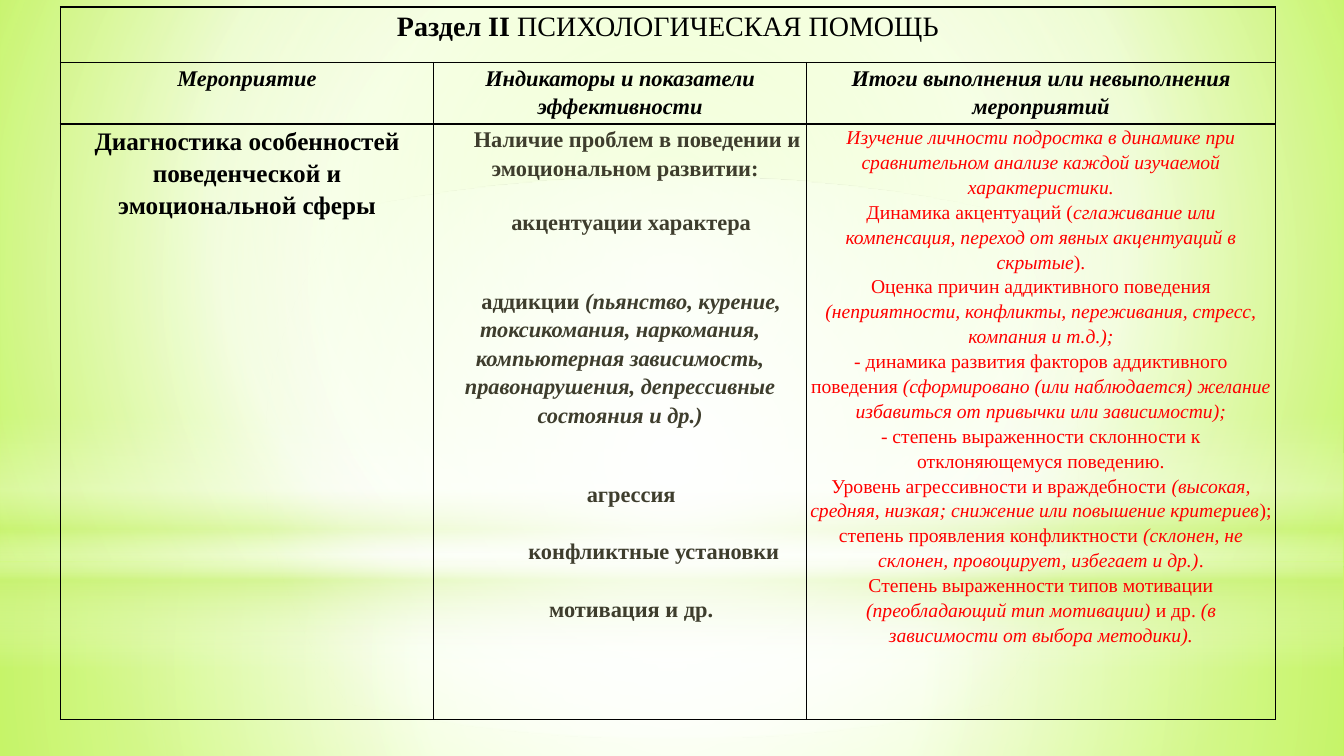
from lxml import etree
from pptx import Presentation
from pptx.dml.color import RGBColor
from pptx.enum.shapes import MSO_SHAPE as Shape
from pptx.enum.text import PP_ALIGN as Align
from pptx.oxml.ns import qn
from pptx.util import Inches, Pt

BLACK = RGBColor(0x00, 0x00, 0x00)
OLIVE = RGBColor(0x3E, 0x3D, 0x2D)
RED = RGBColor(0xFF, 0x00, 0x00)
WHITE = RGBColor(0xFF, 0xFF, 0xFF)
LIME = RGBColor(0xCA, 0xF2, 0x78)
BRIGHT_LIME = RGBColor(0xCA, 0xFF, 0x60)
PALE_LIME = RGBColor(0xF7, 0xFF, 0xE7)
DEEP_LIME = RGBColor(0xB7, 0xFF, 0x29)
FONT = "Times New Roman"

CENTER = (50, 50, 50, 50)
BACKDROP = [(0, BRIGHT_LIME, 100), (60, PALE_LIME, 100), (100, DEEP_LIME, 100)]
BACKDROP_FOCUS = (20, 10, 20, 60)
GLOWS = [
    (Shape.RECTANGLE, 5.58, 1.92, CENTER,
     [(0, WHITE, 91), (37, WHITE, 76), (100, LIME, 79)]),
    (Shape.RECTANGLE, 0, 5.58, CENTER,
     [(0, WHITE, 89), (48, WHITE, 62), (100, LIME, 79)]),
    (Shape.RECTANGLE, 4.12, 2.5, None,
     [(0, WHITE, 0), (29, WHITE, 30), (45, LIME, 40),
      (55, WHITE, 26), (65, LIME, 60), (100, WHITE, 0)]),
    (Shape.OVAL, 1.75, 5.58, CENTER, [(0, WHITE, 100), (56, WHITE, 0)]),
]

SECTION = [[("Раздел II ", "b"), ("ПСИХОЛОГИЧЕСКАЯ ПОМОЩЬ", "")]]
HEADINGS = [
    "Мероприятие",
    "Индикаторы и показатели эффективности",
    "Итоги выполнения или невыполнения мероприятий",
]
ACTIVITY = [[("Диагностика особенностей поведенческой и эмоциональной сферы", "b")]]
INDICATORS = [
    [("Наличие проблем в поведении и эмоциональном развитии:", "b")],
    [("акцентуации характера", "b")],
    [("аддикции ", "b"),
     ("(пьянство, курение, токсикомания, наркомания, компьютерная зависимость, "
      "правонарушения, депрессивные состояния и др.)", "bi")],
    [("агрессия", "b")],
    [("конфликтные установки", "b")],
    [("мотивация и др.", "b")],
]
INDICATOR_LAYOUT = [
    (0, 0.1, 0.24), (18, 0, 0.22), (36, 0, 0.22),
    (36, 0, 0.22), (20.5, 0, 0.67), (20.5, 0, 0.22),
]
RESULTS = [
    [("Изучение личности подростка в динамике при сравнительном анализе "
      "каждой изучаемой характеристики.", "i")],
    [("Динамика акцентуаций (", ""),
     ("сглаживание или компенсация, переход от явных акцентуаций в скрытые", "i"),
     (").", "")],
    [("Оценка причин аддиктивного поведения ", ""),
     ("(неприятности, конфликты, переживания, стресс, компания и т.д.);", "i")],
    [("- динамика развития факторов аддиктивного поведения ", ""),
     ("(сформировано (или наблюдается) желание избавиться от привычки "
      "или зависимости);", "i")],
    [("- степень выраженности склонности к отклоняющемуся поведению.", "")],
    [("Уровень агрессивности и враждебности ", ""),
     ("(высокая, средняя, низкая; снижение или повышение критериев", "i"),
     (");", "")],
    [("степень проявления конфликтности ", ""),
     ("(склонен, не склонен, провоцирует, избегает и др.)", "i"), (".", "")],
    [("Степень выраженности типов мотивации ", ""),
     ("(преобладающий тип мотивации) ", "i"), ("и др. ", ""),
     ("(в зависимости от выбора методики).", "i")],
]

TABLE_LEFT = 0.6
COLUMNS = [3.7, 3.7, 4.65]
HEADER_TOP, HEADER_ROWS, HEADER_INSET = 0.07, [0.55, 0.61], 0.07
BODY_ROWS, BODY_INSET = [5.91], 0.03


def set_gradient(holder, stops, focus):
    gradient = etree.Element(qn("a:gradFill"), rotWithShape="1")
    stop_list = etree.SubElement(gradient, qn("a:gsLst"))
    for position, color, opacity in stops:
        stop = etree.SubElement(stop_list, qn("a:gs"), pos=str(position * 1000))
        tint = etree.SubElement(stop, qn("a:srgbClr"), val=str(color))
        if opacity < 100:
            etree.SubElement(tint, qn("a:alpha"), val=str(opacity * 1000))
    if focus:
        circle = etree.SubElement(gradient, qn("a:path"), path="circle")
        sides = {side: str(share * 1000) for side, share in zip("ltrb", focus)}
        etree.SubElement(circle, qn("a:fillToRect"), **sides)
    else:
        etree.SubElement(gradient, qn("a:lin"), ang="5400000", scaled="0")
    holder.replace(holder.find(qn("a:solidFill")), gradient)


def add_grid(page, top, rows, inset):
    frame = page.shapes.add_table(
        len(rows), len(COLUMNS), Inches(TABLE_LEFT), Inches(top),
        Inches(sum(COLUMNS)), Inches(sum(rows)))
    grid = frame.table
    grid.first_row = grid.horz_banding = False
    for column, width in zip(grid.columns, COLUMNS):
        column.width = Inches(width)
    for row, height in zip(grid.rows, rows):
        row.height = Inches(height)
    for cell in grid.iter_cells():
        cell.margin_left = cell.margin_right = Inches(inset)
        cell.margin_top = cell.margin_bottom = 0
        cell.fill.background()
        properties = cell.fill._xPr
        for place, side in enumerate(("lnL", "lnR", "lnT", "lnB")):
            border = etree.Element(qn("a:" + side), w=str(Pt(1)))
            paint = etree.SubElement(border, qn("a:solidFill"))
            etree.SubElement(paint, qn("a:srgbClr"), val=str(BLACK))
            properties.insert(place, border)
    return grid


def write(cell, paragraphs, size, color, layout=None):
    frame = cell.text_frame
    for number, runs in enumerate(paragraphs):
        para = frame.add_paragraph() if number else frame.paragraphs[0]
        para.alignment = Align.CENTER
        para.line_spacing = 1.15
        if layout:
            before, left, first = layout[number]
            para.space_before = Pt(before)
            properties = para._p.get_or_add_pPr()
            properties.set("marL", str(Inches(left)))
            properties.set("indent", str(Inches(first)))
        for words, style in runs:
            span = para.add_run()
            span.text = words
            span.font.name = FONT
            span.font.size = Pt(size)
            span.font.bold = "b" in style
            span.font.italic = "i" in style
            span.font.color.rgb = color


def main():
    deck = Presentation()
    deck.slide_width, deck.slide_height = Inches(13.33), Inches(7.5)
    page = deck.slides.add_slide(deck.slide_layouts[6])

    page.background.fill.solid()
    set_gradient(page.element.find(".//" + qn("p:bgPr")), BACKDROP, BACKDROP_FOCUS)
    for kind, top, height, focus, stops in GLOWS:
        glow = page.shapes.add_shape(
            kind, 0, Inches(top), deck.slide_width, Inches(height))
        glow.shadow.inherit = False
        glow.line.fill.background()
        glow.fill.solid()
        set_gradient(glow.element.spPr, stops, focus)

    body = add_grid(page, HEADER_TOP + sum(HEADER_ROWS), BODY_ROWS, BODY_INSET)
    write(body.cell(0, 0), ACTIVITY, 18, BLACK)
    write(body.cell(0, 1), INDICATORS, 16, OLIVE, INDICATOR_LAYOUT)
    write(body.cell(0, 2), RESULTS, 14, RED)

    header = add_grid(page, HEADER_TOP, HEADER_ROWS, HEADER_INSET)
    header.cell(0, 0).merge(header.cell(0, 2))
    write(header.cell(0, 0), SECTION, 20, BLACK)
    for index, heading in enumerate(HEADINGS):
        write(header.cell(1, index), [[(heading, "bi")]], 16, BLACK)

    deck.save("out.pptx")


if __name__ == "__main__":
    main()
